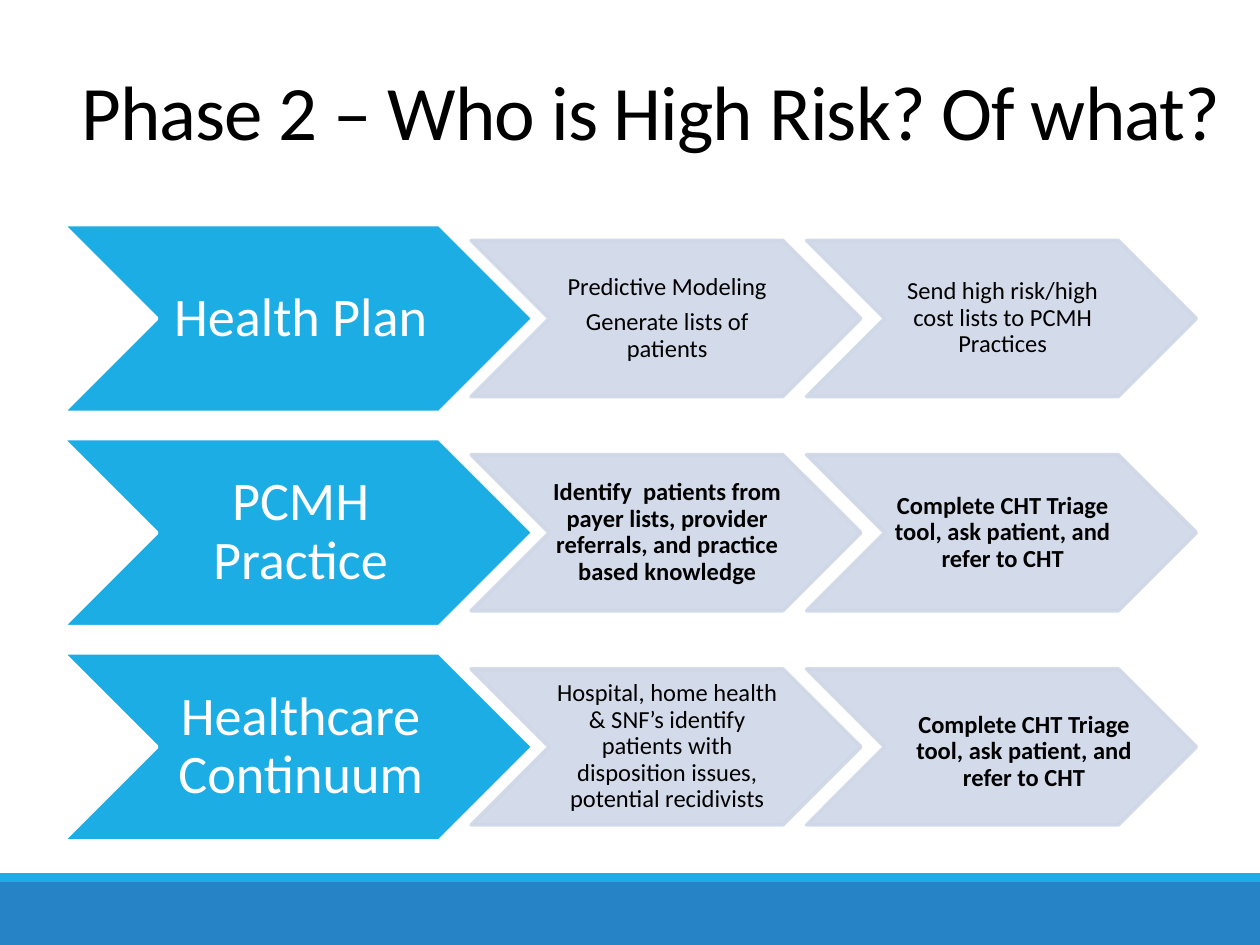
import pptx
import pptx.util
import pptx.dml.color
import pptx.enum.shapes
import pptx.enum.text
import pptx.oxml
import pptx.oxml.ns

Pt = pptx.util.Pt
KIND = pptx.enum.shapes.MSO_SHAPE
HEX = {"blue": "2683C6", "cyan": "1CADE4", "pale": "CFD7E7",
       "white": "FFFFFF", "black": "000000"}


def paint(shape, fill, line=None, alpha=None):
    shape.shadow.inherit = False
    shape.fill.solid()
    shape.fill.fore_color.rgb = pptx.dml.color.RGBColor.from_string(HEX[fill])
    if line:
        shape.line.width = Pt(2)
        shape.line.color.rgb = pptx.dml.color.RGBColor.from_string(HEX[line])
    else:
        shape.line.fill.background()
    if alpha:
        for color in shape.element.spPr.iter(pptx.oxml.ns.qn("a:srgbClr")):
            node = pptx.oxml.parse_xml(
                f'<a:alpha {pptx.oxml.ns.nsdecls("a")} val="{alpha * 1000}"/>')
            color.append(node)


def write(frame, text, size, color, pads, space=0.9, bold=False):
    frame.text = text
    frame.word_wrap = True
    frame.auto_size = pptx.enum.text.MSO_AUTO_SIZE.NONE
    frame.vertical_anchor = pptx.enum.text.MSO_ANCHOR.MIDDLE
    frame.margin_left, frame.margin_top, frame.margin_right, frame.margin_bottom = map(Pt, pads)
    for i, para in enumerate(frame.paragraphs):
        para.alignment = pptx.enum.text.PP_ALIGN.CENTER
        para.line_spacing = space
        para.space_before = Pt(4.9 if i else 0)
        for run in para.runs:
            run.font.name = "Calibri"
            run.font.size = Pt(size)
            run.font.bold = bold
            run.font.color.rgb = pptx.dml.color.RGBColor.from_string(HEX[color])


deck = pptx.Presentation()
deck.slide_width, deck.slide_height = Pt(720), Pt(540)
slide = deck.slides.add_slide(deck.slide_layouts[5])
shapes = slide.shapes

# Footer bands
for top, high, color in [(504, 36, "blue"), (499, 5, "cyan")]:
    band = shapes.add_shape(KIND.RECTANGLE, 0, Pt(top), Pt(720), Pt(high))
    paint(band, color)

# Title
title = shapes.title
title.left, title.top, title.width, title.height = map(Pt, (36, 21.6, 672, 90))
write(title.text_frame, "Phase 2 – Who is High Risk? Of what?", 44, "black",
      (7.2, 3.6, 7.2, 3.6), space=0.85)
title.text_frame.paragraphs[0].runs[0].font._element.set("spc", "-50")

# Rows: owner, then steps as (text, bold)
triage = "Complete CHT Triage tool, ask patient, and refer to CHT"
rows = [
    ("Health Plan",
     [("Predictive Modeling\nGenerate lists of patients", False),
      ("Send high risk/high cost lists to PCMH Practices", False)]),
    ("PCMH Practice",
     [("Identify  patients from payer lists, provider referrals, "
       "and practice based knowledge", True),
      (triage, True)]),
    ("Healthcare Continuum",
     [("Hospital, home health & SNF’s identify patients with "
       "disposition issues, potential recidivists", False),
      (triage, True)]),
]
left, first, pitch = 36, 128.3, 122.4
wide, high = 268.6, 107.4
step_w, step_h, step_x, step_gap = 222.8, 89.2, 269.2, 191.7
pads = (1.4, 0.7, 0, 0.7)

for r, (owner, steps) in enumerate(rows):
    top = first + r * pitch
    head = shapes.add_shape(KIND.CHEVRON, Pt(left), Pt(top), Pt(wide), Pt(high))
    paint(head, "cyan", "white")
    write(head.text_frame, owner, 31, "white", (2.9, 1.4, 0, 1.4))

    step_y = top + (high - step_h) / 2
    for c, (text, bold) in enumerate(steps):
        x = step_x + c * step_gap
        step = shapes.add_shape(KIND.CHEVRON, Pt(x), Pt(step_y), Pt(step_w), Pt(step_h))
        paint(step, "pale", "pale", alpha=90)
        frame = step.text_frame
        # The last step's label sits off centre, so it has its own box
        if (r, c) == (2, 1):
            label = shapes.add_textbox(Pt(x + step_h / 2 + 12.2), Pt(step_y + 2.9),
                                       Pt(step_w - step_h), Pt(step_h))
            frame = label.text_frame
        write(frame, text, 14, "black", pads, bold=bold)

deck.save("out.pptx")
